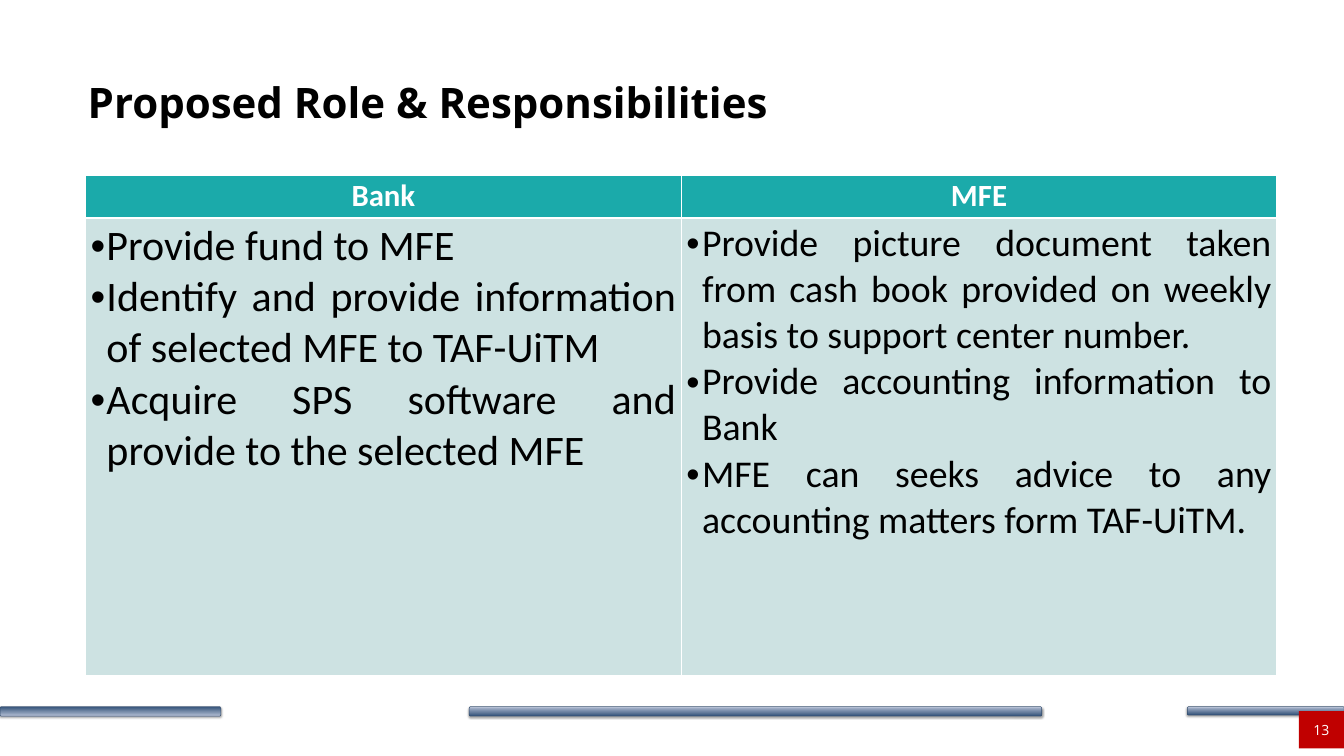
from lxml.etree import SubElement
from pptx import Presentation
from pptx.dml.color import RGBColor
from pptx.enum.shapes import MSO_SHAPE
from pptx.enum.text import MSO_ANCHOR, MSO_AUTO_SIZE, PP_ALIGN
from pptx.oxml.ns import qn
from pptx.util import Pt

WHITE = RGBColor(0xFF, 0xFF, 0xFF)
BLACK = RGBColor(0x00, 0x00, 0x00)
TEAL = RGBColor(0x1B, 0xAA, 0xAA)
PALE_TEAL = RGBColor(0xCD, 0xE2, 0xE2)
RED = RGBColor(0xC0, 0x00, 0x00)
BAR_DARK = RGBColor(0x32, 0x51, 0x78)
BAR_LIGHT = RGBColor(0xB4, 0xBF, 0xD4)
BAR_LINE = RGBColor(0x37, 0x50, 0x6F)

TITLE_FONT = "Open Sans"
TABLE_FONT = "Calibri"
COLUMN_WIDTH = 850.8
HEADER_HEIGHT = 61.7
BODY_HEIGHT = 653.5
BULLET_INDENT = 22.5

BARS = [(0, 315.4, 13.7, False), (1696.3, 223.9, 12.2, True), (670.3, 817.9, 13.7, True)]

ROLES = [
    ("Bank", 60, [
        "Provide fund to MFE",
        "Identify and provide information of selected MFE to TAF-UiTM",
        "Acquire SPS software and provide to the selected MFE",
    ]),
    ("MFE", 54, [
        "Provide picture document taken from cash book provided on weekly basis "
        "to support center number.",
        "Provide accounting information to Bank",
        "MFE can seeks advice to any accounting matters form TAF-UiTM.",
    ]),
]


def style_font(font, name, size, color, bold=False):
    """Set the typeface, size, colour and weight of a font."""
    font.name = name
    font.size = Pt(size)
    font.color.rgb = color
    font.bold = bold


def set_margins(frame, across, down):
    """Set equal side margins and equal top and bottom margins."""
    frame.margin_left = frame.margin_right = Pt(across)
    frame.margin_top = frame.margin_bottom = Pt(down)


def add_bar(page, left, width, height, flipped):
    """Add one shaded footer bar with a soft shadow below it."""
    bar = page.shapes.add_shape(
        MSO_SHAPE.ROUNDED_RECTANGLE, Pt(left), Pt(1009.4), Pt(width), Pt(height))
    bar.rotation = 180
    properties = bar.element.spPr
    if flipped:
        properties.find(qn("a:xfrm")).set("flipV", "1")
    bar.fill.gradient()
    bar.fill.gradient_angle = 90
    for stop, color in zip(bar.fill.gradient_stops, (BAR_DARK, BAR_LIGHT)):
        stop.color.rgb = color
    bar.line.color.rgb = BAR_LINE
    bar.line.width = Pt(0.75)
    bar.shadow.inherit = False
    shadow = SubElement(
        properties.find(qn("a:effectLst")), qn("a:outerShdw"), blurRad=str(Pt(3.1)),
        dist=str(Pt(1.8)), dir="5400000", rotWithShape="0")
    tint = SubElement(shadow, qn("a:srgbClr"), val=str(BLACK))
    SubElement(tint, qn("a:alpha"), val="35000")


def add_page_number(page, number):
    """Add the red page number box in the bottom right corner."""
    box = page.shapes.add_shape(
        MSO_SHAPE.RECTANGLE, Pt(1855.4), Pt(1015.9), Pt(64.8), Pt(53.3))
    box.shadow.inherit = False
    box.fill.solid()
    box.fill.fore_color.rgb = RED
    box.line.fill.background()
    frame = box.text_frame
    frame.vertical_anchor = MSO_ANCHOR.MIDDLE
    set_margins(frame, 0, 14.4)
    frame.text = number
    para = frame.paragraphs[0]
    para.alignment = PP_ALIGN.CENTER
    style_font(para.font, TITLE_FONT, 20, WHITE)


def set_title(page, text):
    """Place and format the title placeholder."""
    title = page.shapes.title
    title.left, title.top, title.width, title.height = Pt(108), Pt(55.4), Pt(1728), Pt(180)
    frame = title.text_frame
    frame.text = text
    frame.word_wrap = True
    frame.auto_size = MSO_AUTO_SIZE.NONE
    frame.vertical_anchor = MSO_ANCHOR.MIDDLE
    set_margins(frame, 17.3, 8.6)
    para = frame.paragraphs[0]
    para.alignment = PP_ALIGN.LEFT
    style_font(para.font, TITLE_FONT, 60, BLACK, True)


def style_cell(cell, color, top, bottom):
    """Give a cell white borders, a plain fill and its margins."""
    properties = cell._tc.get_or_add_tcPr()
    for side, width in (("L", 1), ("R", 1), ("T", top), ("B", bottom)):
        border = SubElement(properties, qn(f"a:ln{side}"), w=str(Pt(width)))
        fill = SubElement(border, qn("a:solidFill"))
        SubElement(fill, qn("a:srgbClr"), val=str(WHITE))
    cell.fill.solid()
    cell.fill.fore_color.rgb = color
    set_margins(cell, 7.2, 3.6)


def add_bullet(para):
    """Turn a paragraph into a justified bullet with a hanging indent."""
    para.alignment = PP_ALIGN.JUSTIFY
    properties = para._p.get_or_add_pPr()
    properties.set("marL", str(Pt(BULLET_INDENT)))
    properties.set("indent", str(-Pt(BULLET_INDENT)))
    SubElement(properties, qn("a:buFont"), typeface="Arial")
    SubElement(properties, qn("a:buChar"), char="•")


def add_roles_table(page):
    """Add the table with one column of duties for each party."""
    table = page.shapes.add_table(
        2, len(ROLES), Pt(122.4), Pt(249.8), Pt(COLUMN_WIDTH * len(ROLES)),
        Pt(HEADER_HEIGHT + BODY_HEIGHT)).table
    table.rows[0].height = Pt(HEADER_HEIGHT)
    table.rows[1].height = Pt(BODY_HEIGHT)
    for column, (party, size, duties) in enumerate(ROLES):
        table.columns[column].width = Pt(COLUMN_WIDTH)
        header, body = table.cell(0, column), table.cell(1, column)
        style_cell(header, TEAL, 1, 3)
        header.text = party
        heading = header.text_frame.paragraphs[0]
        heading.alignment = PP_ALIGN.CENTER
        style_font(heading.font, TABLE_FONT, 44, WHITE, True)
        style_cell(body, PALE_TEAL, 3, 1)
        body.text = "\n".join(duties)
        for para in body.text_frame.paragraphs:
            add_bullet(para)
            style_font(para.font, TABLE_FONT, size, BLACK)


def main():
    """Build the roles slide and save the deck."""
    deck = Presentation()
    deck.slide_width, deck.slide_height = Pt(1920), Pt(1080)
    page = deck.slides.add_slide(deck.slide_layouts[5])
    for bar in BARS:
        add_bar(page, *bar)
    add_page_number(page, "13")
    set_title(page, "Proposed Role & Responsibilities")
    add_roles_table(page)
    deck.save("out.pptx")


if __name__ == "__main__":
    main()
